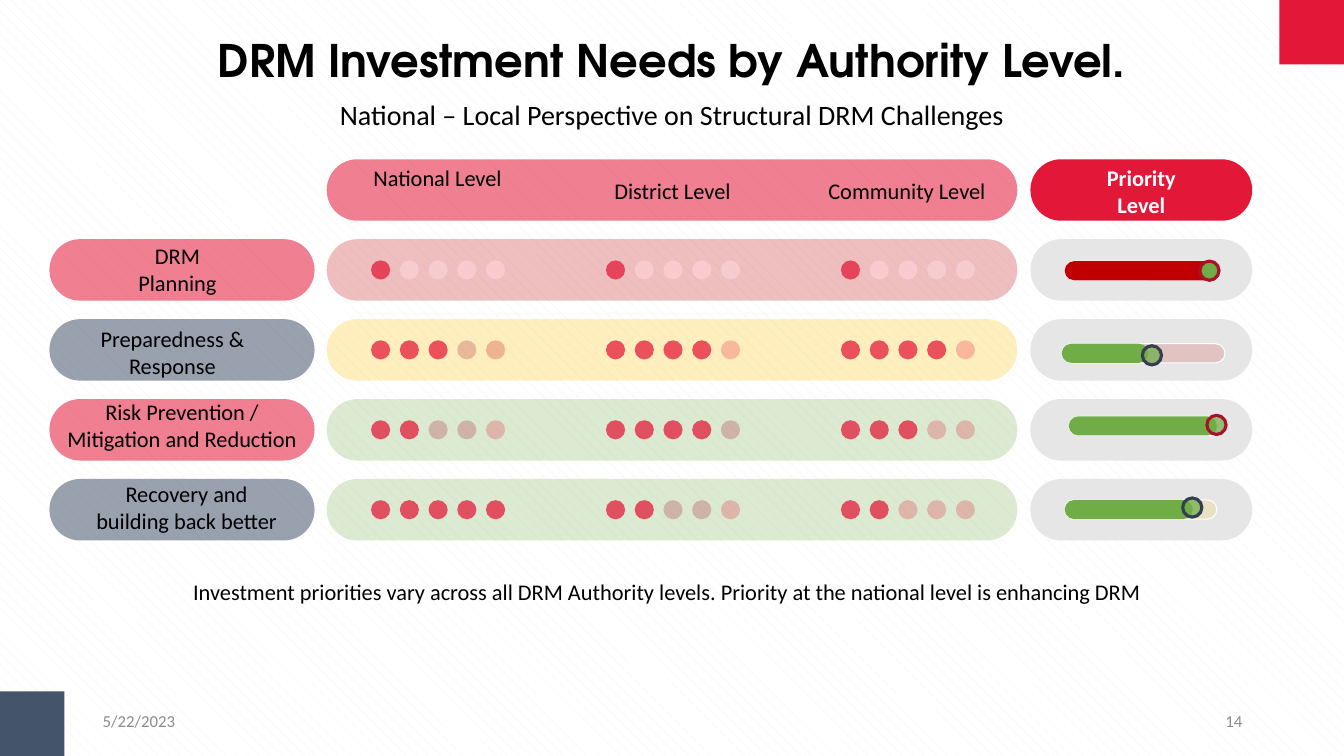
import pptx
import pptx.util
import pptx.dml.color
import pptx.enum.dml
import pptx.enum.shapes
import pptx.enum.text
from lxml import etree

RGBColor = pptx.dml.color.RGBColor
Inches = pptx.util.Inches
ALIGN = pptx.enum.text.PP_ALIGN
ANCHOR = pptx.enum.text.MSO_ANCHOR
SHAPE = pptx.enum.shapes.MSO_SHAPE

RED = RGBColor(0xE3, 0x17, 0x37)
DARK_RED = RGBColor(0xC0, 0x00, 0x00)
MAROON = RGBColor(0xAA, 0x11, 0x29)
RED_RING = RGBColor(0xA8, 0x11, 0x29)
PINK = RGBColor(0xFA, 0xD0, 0xD6)
SLATE = RGBColor(0x44, 0x54, 0x6A)
SLATE_RING = RGBColor(0x33, 0x3F, 0x50)
AMBER = RGBColor(0xFF, 0xC0, 0x00)
GREEN = RGBColor(0x70, 0xAD, 0x47)
LIGHT_GRAY = RGBColor(0xE7, 0xE6, 0xE6)
FOOTER_GRAY = RGBColor(0x8C, 0x8C, 0x8C)
PATTERN_GRAY = RGBColor(0xF2, 0xF2, 0xF2)
WHITE = RGBColor(0xFF, 0xFF, 0xFF)
BLACK = RGBColor(0, 0, 0)

DOT_STYLES = {"R": (RED, 73), "P": (PINK, 73), "M": (MAROON, 25),
              "C": (DARK_RED, 25), "F": (RED, 25)}
DOT = 0.19
DOT_PITCH = 0.285
DOTS_LEFT = 3.68
LEVEL_PITCH = 2.33
HEADER_TOP = 1.58
ROW_PITCH = 0.793
PILL_HEIGHT = 0.61

# Each label and slider entry gives left, top, width and, for labels, height.
LEVELS = [("National Level", 3.68, 1.63, 1.32), ("District Level", 6.07, 1.76, 1.2),
          ("Community Level", 8.19, 1.76, 1.61)]
NEEDS = [
    dict(name="DRM Planning", label=(1.16, 2.4, 1.2, 0.54), label_fill=(RED, 55),
         band=DARK_RED, dots=("RPPPP", "RPPPP", "RPPPP"), track=(10.56, 2.59, 1.51),
         track_fill=(DARK_RED, 100), level=(1.5, DARK_RED),
         knob=(11.9, 2.59, 100, RED_RING)),
    dict(name="Preparedness & Response", label=(0.61, 3.22, 2.2, 0.54),
         label_fill=(SLATE, 55), band=AMBER, dots=("RRRMC", "RRRRF", "RRRRF"),
         track=(10.53, 3.41, 1.62), track_fill=(DARK_RED, 15), level=(0.86, GREEN),
         knob=(11.33, 3.43, 73, SLATE_RING)),
    dict(name="Risk Prevention / Mitigation and Reduction",
         label=(0.58, 3.95, 2.45, 0.54), label_fill=(RED, 55), band=GREEN,
         dots=("RRMMF", "RRRRM", "RRRFF"), track=(10.6, 4.13, 1.51),
         track_fill=(WHITE, 15), level=(1.47, GREEN), knob=(11.97, 4.12, 73, RED_RING)),
    dict(name="Recovery and building back better", label=(0.89, 4.76, 1.92, 0.54),
         label_fill=(SLATE, 55), band=GREEN, dots=("RRRRR", "RRMMF", "RRFFF"),
         track=(10.56, 4.96, 1.51), track_fill=(AMBER, 15), level=(1.27, GREEN),
         knob=(11.73, 4.94, 73, SLATE_RING)),
]


class NeedsSlide:
    """Draws the elements of the investment needs slide in one style."""

    def __init__(self, deck):
        self.slide = deck.slides.add_slide(deck.slide_layouts[6])
        self.font = "Calibri"
        backdrop = self.slide.background.fill
        backdrop.patterned()
        backdrop.pattern = pptx.enum.dml.MSO_PATTERN.SHINGLE
        backdrop.fore_color.rgb = PATTERN_GRAY
        backdrop.back_color.rgb = WHITE

    def shape(self, kind, left, top, width, height, color, opacity=100, line=None):
        figure = self.slide.shapes.add_shape(
            kind, Inches(left), Inches(top), Inches(width), Inches(height))
        figure.shadow.inherit = False
        figure.fill.solid()
        figure.fill.fore_color.rgb = color
        if opacity < 100:
            tint = figure.fill._xPr.find(".//" + pptx.oxml.ns.qn("a:srgbClr"))
            etree.SubElement(tint, pptx.oxml.ns.qn("a:alpha"), val=str(opacity * 1000))
        if line:
            figure.line.color.rgb, figure.line.width = line[0], pptx.util.Pt(line[1])
        else:
            figure.line.fill.background()
        return figure

    def pill(self, left, top, width, color, opacity=100, height=PILL_HEIGHT, line=None):
        pill = self.shape(SHAPE.ROUNDED_RECTANGLE, left, top, width, height,
                          color, opacity, line)
        pill.adjustments[0] = 0.5

    def dots(self, left, top, ratings):
        for position, rating in enumerate(ratings):
            self.shape(SHAPE.OVAL, left + position * DOT_PITCH, top, DOT, DOT,
                       *DOT_STYLES[rating])

    def slider(self, need):
        left, top, width = need["track"]
        self.pill(left, top, width, *need["track_fill"], height=DOT, line=(WHITE, 0.75))
        level_width, level_color = need["level"]
        self.pill(left, top, level_width, level_color, height=DOT)
        knob_left, knob_top, opacity, ring = need["knob"]
        self.shape(SHAPE.OVAL, knob_left, knob_top, DOT, DOT, GREEN, opacity, (ring, 2.25))

    def text(self, words, left, top, width, height, size=16, color=BLACK, bold=False,
             font=None, align=ALIGN.CENTER, anchor=ANCHOR.MIDDLE, wrap=True, inset=0):
        frame = self.slide.shapes.add_textbox(
            Inches(left), Inches(top), Inches(width), Inches(height)).text_frame
        frame.word_wrap = wrap
        frame.vertical_anchor = anchor
        frame.margin_left = frame.margin_right = Inches(inset)
        frame.margin_top = frame.margin_bottom = Inches(inset / 2)
        paragraph = frame.paragraphs[0]
        paragraph.text = words
        paragraph.alignment = align
        paragraph.font.name = font or self.font
        paragraph.font.size = pptx.util.Pt(size)
        paragraph.font.bold = bold
        paragraph.font.color.rgb = color


def main():
    deck = pptx.Presentation()
    deck.slide_width, deck.slide_height = Inches(13.33), Inches(7.5)
    page = NeedsSlide(deck)

    page.shape(SHAPE.RECTANGLE, 12.69, 0, 0.64, 0.64, RED)
    page.shape(SHAPE.RECTANGLE, 0, 6.86, 0.64, 0.64, SLATE)
    page.text("DRM Investment Needs by Authority Level.", 1.6, 0.32, 10.13, 0.54,
              size=32, bold=True, font="TeX Gyre Adventor")
    page.text("National – Local Perspective on Structural DRM Challenges",
              1.6, 0.97, 10.13, 0.34, size=20, anchor=ANCHOR.TOP)

    page.pill(3.24, HEADER_TOP, 6.85, RED, 55)
    for name, left, top, width in LEVELS:
        page.text(name, left, top, width, 0.27, wrap=False)
    page.pill(10.22, HEADER_TOP, 2.2, RED)
    page.text("Priority Level", 10.77, 1.63, 1.1, 0.54, color=WHITE, bold=True)

    for row, need in enumerate(NEEDS, start=1):
        top = HEADER_TOP + row * ROW_PITCH
        page.pill(0.49, top, 2.63, *need["label_fill"])
        page.pill(3.24, top, 6.85, need["band"], 25)
        page.pill(10.22, top, 2.2, LIGHT_GRAY)
        page.text(need["name"], *need["label"])
        for level, ratings in enumerate(need["dots"]):
            page.dots(DOTS_LEFT + level * LEVEL_PITCH, top + 0.21, ratings)
        page.slider(need)

    page.text("Investment priorities vary across all DRM Authority levels. "
              "Priority at the national level is enhancing DRM",
              0.89, 5.74, 11.45, 0.27, anchor=ANCHOR.TOP)
    page.text("5/22/2023", 0.92, 6.95, 3, 0.4, size=12, color=FOOTER_GRAY,
              align=ALIGN.LEFT, inset=0.1)
    page.text("14", 9.42, 6.95, 3, 0.4, size=12, color=FOOTER_GRAY,
              align=ALIGN.RIGHT, inset=0.1)
    deck.save("out.pptx")


if __name__ == "__main__":
    main()
